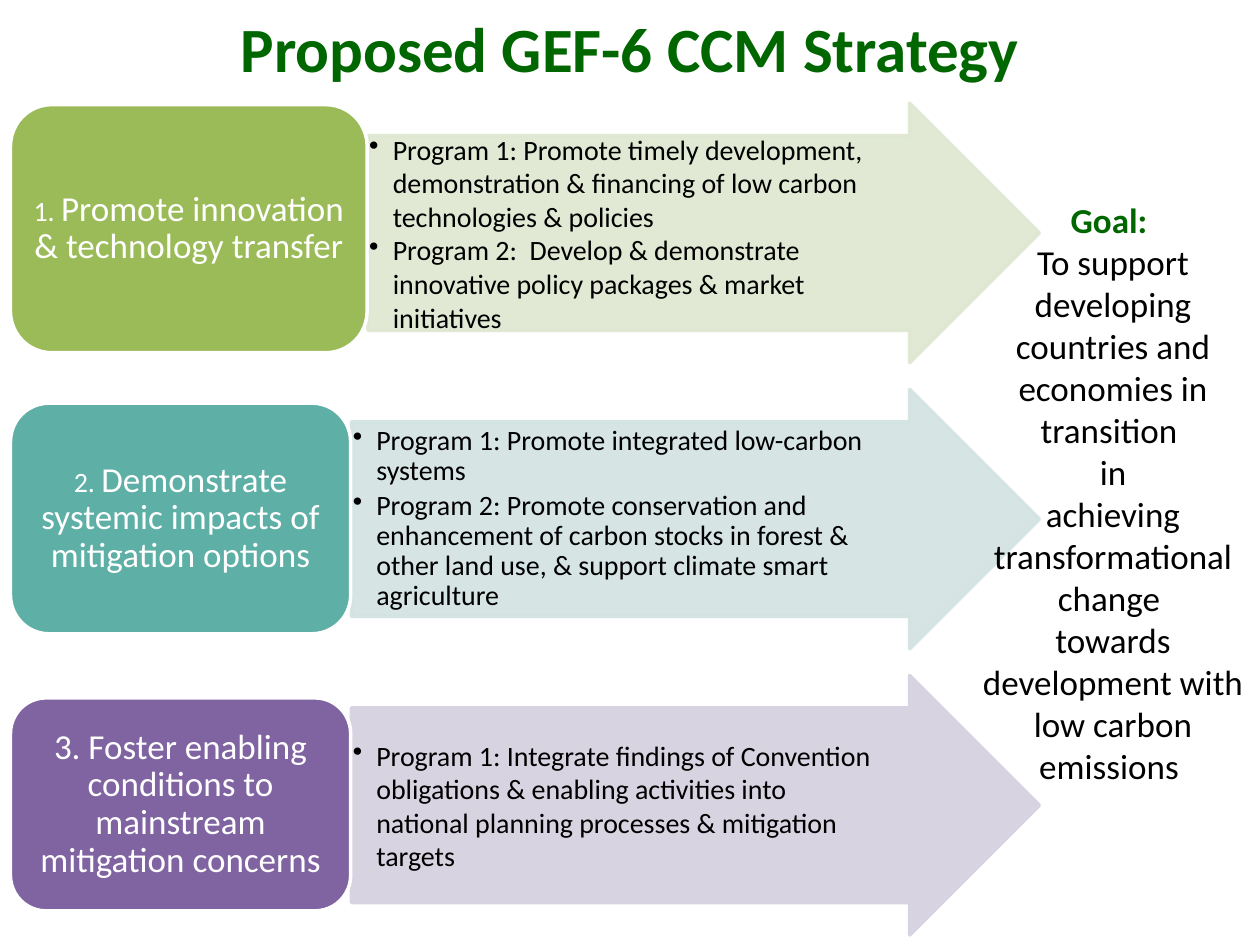
import pptx
import pptx.dml.color
import pptx.enum.shapes
import pptx.enum.text
import pptx.oxml.ns
import pptx.util
from lxml import etree

Pt = pptx.util.Pt
SHAPES = pptx.enum.shapes.MSO_SHAPE
ALIGN = pptx.enum.text.PP_ALIGN
MIDDLE = pptx.enum.text.MSO_ANCHOR.MIDDLE


def set_color(fill, color, opacity=100):
    """Make a fill solid; opacity is a percentage."""
    fill.solid()
    fill.fore_color.rgb = pptx.dml.color.RGBColor.from_string(color)
    if opacity < 100:
        # python-pptx exposes the element only privately, so reach it through the fill
        element = fill._xPr.find(".//" + pptx.oxml.ns.qn("a:srgbClr"))
        etree.SubElement(element, pptx.oxml.ns.qn("a:alpha"), val=str(opacity * 1000))


def write_paragraph(frame, position, runs, color, bold=False, bullet=False, **paragraph_format):
    """Fill the paragraph at position with runs given as (text, size) pairs."""
    paragraph = frame.paragraphs[0] if position == 0 else frame.add_paragraph()
    if bullet:
        properties = paragraph._p.get_or_add_pPr()
        properties.set("marL", str(Pt(13.5)))
        properties.set("indent", str(-Pt(13.5)))
        etree.SubElement(properties, pptx.oxml.ns.qn("a:buChar"), char="•")
    for name, value in paragraph_format.items():
        setattr(paragraph, name, value)
    for text, size in runs:
        run = paragraph.add_run()
        run.text = text
        for name, value in {"name": "Calibri", "size": Pt(size), "bold": bold}.items():
            setattr(run.font, name, value)
        set_color(run.font.fill, color)


presentation = pptx.Presentation()
presentation.slide_width, presentation.slide_height = Pt(720), Pt(540)
slide = presentation.slides.add_slide(presentation.slide_layouts[6])

title = slide.shapes.add_textbox(Pt(36), Pt(2), Pt(648), Pt(50.5))
title.text_frame.word_wrap = True
title.text_frame.vertical_anchor = MIDDLE
write_paragraph(title.text_frame, 0, [("Proposed GEF-6 CCM Strategy", 36)], "006600",
                bold=True, alignment=ALIGN.CENTER)

card_left, arrow_right = 6, 594
first_arrow_top, arrow_pitch, arrow_height = 59, 163.5, 148.3
loose = {"line_spacing": 1.0}
tight = {"line_spacing": 0.9, "space_after": Pt(2.5)}

objectives = [
    {"card": (59.8, 203.8, 141.8), "card_color": "9BBB59",
     "arrow_color": "DEE7D1", "opacity": 90, "spacing": loose,
     "heading": [("1. ", 16), ("Promote innovation & technology transfer", 20)],
     "programs": [
         "Program 1: Promote timely development, demonstration & financing of low carbon "
         "technologies & policies",
         "Program 2:  Develop & demonstrate innovative policy packages & market initiatives"]},
    {"card": (230.4, 194.4, 131.8), "card_color": "5EAFA6",
     "arrow_color": "D2E3E2", "opacity": 90, "spacing": tight,
     "heading": [("2. ", 16), ("Demonstrate systemic impacts of mitigation options", 20)],
     "programs": [
         "Program 1: Promote integrated low-carbon systems",
         "Program 2: Promote conservation and enhancement of carbon stocks in forest & other "
         "land use, & support climate smart agriculture"]},
    {"card": (398.8, 194.4, 121.7), "card_color": "8064A2",
     "arrow_color": "D8D3E0", "opacity": 100, "spacing": loose,
     "heading": [("3. Foster enabling conditions to mainstream mitigation concerns", 20)],
     "programs": [
         "Program 1: Integrate findings of Convention obligations & enabling activities into "
         "national planning processes & mitigation targets"]},
]

for row, objective in enumerate(objectives):
    card_top, card_width, card_height = objective["card"]
    arrow_left = card_left + card_width + 0.5
    arrow = slide.shapes.add_shape(
        SHAPES.RIGHT_ARROW, Pt(arrow_left), Pt(first_arrow_top + row * arrow_pitch),
        Pt(arrow_right - arrow_left), Pt(arrow_height))
    arrow.adjustments[0], arrow.adjustments[1] = 0.75, 0.5
    card = slide.shapes.add_shape(
        SHAPES.ROUNDED_RECTANGLE, Pt(card_left), Pt(card_top), Pt(card_width), Pt(card_height))

    # The wide right margin keeps the programs out of the arrowhead.
    for shape, color, line_color, opacity, margins in (
            (arrow, objective["arrow_color"], objective["arrow_color"], objective["opacity"],
             (0.7, 0.7, 37, 0.7)),
            (card, objective["card_color"], "FFFFFF", 100, (5.2, 2.5, 5.2, 2.5))):
        shape.shadow.inherit = False
        set_color(shape.fill, color, opacity)
        shape.line.width = Pt(2)
        set_color(shape.line.fill, line_color, opacity)
        frame_format = {"word_wrap": True, "vertical_anchor": MIDDLE}
        for side, margin in zip(("left", "top", "right", "bottom"), margins):
            frame_format["margin_" + side] = Pt(margin)
        for name, value in frame_format.items():
            setattr(shape.text_frame, name, value)

    write_paragraph(card.text_frame, 0, objective["heading"], "FFFFFF",
                    alignment=ALIGN.CENTER, line_spacing=0.9)
    for position, program in enumerate(objective["programs"]):
        write_paragraph(arrow.text_frame, position, [(program, 16)], "000000", bullet=True,
                        alignment=ALIGN.LEFT, **objective["spacing"])

goal = slide.shapes.add_textbox(Pt(552), Pt(108), Pt(168), Pt(346.5))
goal.text_frame.word_wrap = True
goal.text_frame.vertical_anchor = MIDDLE
goal_lines = [
    "Goal: ",
    "To support developing countries and economies in transition ",
    "in",
    "achieving transformational change ",
    "towards development with low carbon emissions ",
]
for position, line in enumerate(goal_lines):
    is_heading = position == 0
    write_paragraph(goal.text_frame, position, [(line, 20)],
                    "006600" if is_heading else "000000",
                    bold=is_heading, alignment=ALIGN.CENTER)

presentation.save("out.pptx")
